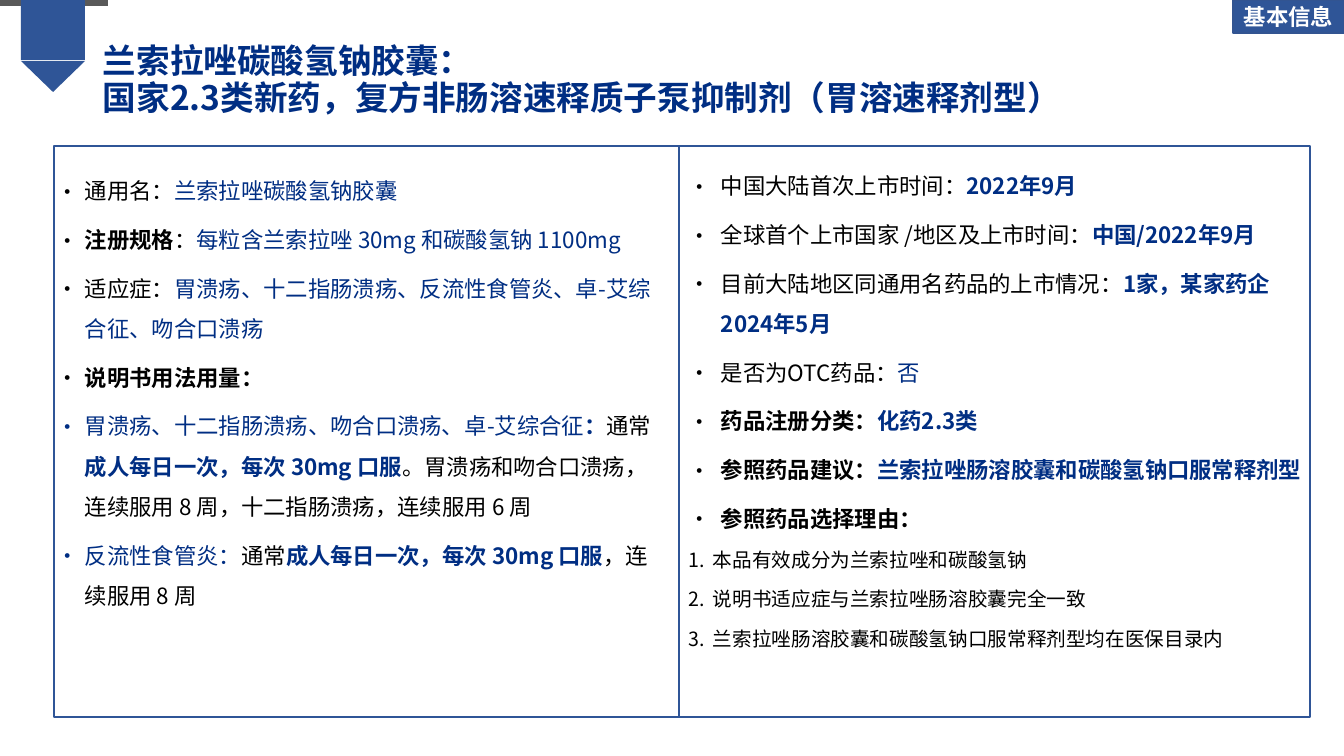
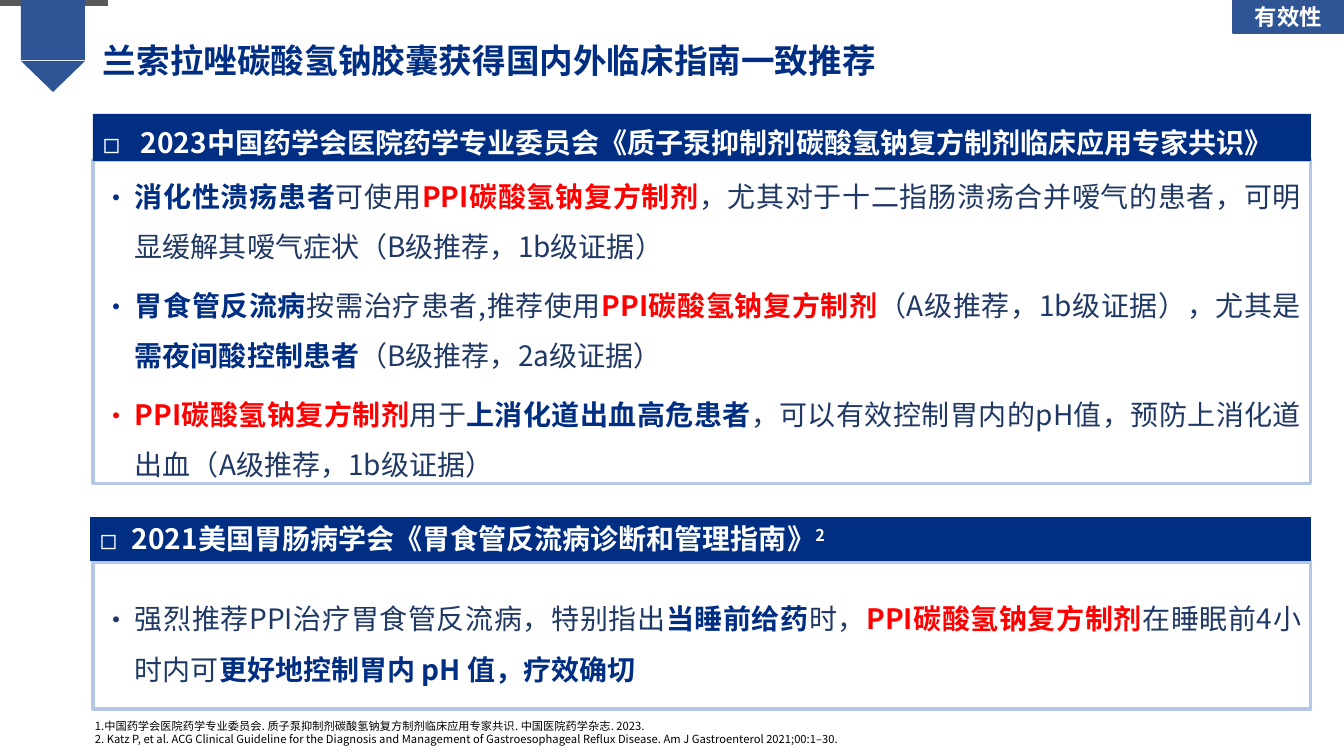
from lxml import etree
from pptx import Presentation
from pptx import util as u
from pptx.dml.color import RGBColor
from pptx.enum import shapes, text
from pptx.oxml.ns import qn

FONT = "Noto Sans CJK SC"
PX = 914400 / 100.8
COLORS = {
    "navy": "002E83", "blue": "2F5597", "edge": "325491", "pale": "B4C7E7",
    "ink": "203864", "black": "000000", "red": "FF0000", "gray": "595959",
    "white": "FFFFFF",
}
# run style: colour, bold
STYLES = {
    "plain": ("black", False), "label": ("black", True),
    "value": ("navy", False), "key": ("navy", True),
    "body": ("ink", False), "hot": ("red", True),
    "head": ("white", True), "super": ("white", True),
}

# paragraph looks
FACT = dict(size=16, spacing=1.5, before=6, indent=28, bullet="•")
MARKET = dict(FACT, indent=32)
REASON = dict(size=14, spacing=1.5, before=3, indent=24, bullet="1.")
ADVICE = dict(size=20, spacing=1.5, before=3, after=3, indent=32, bullet="•",
              align=text.PP_ALIGN.JUSTIFY)
TITLE = dict(size=24, spacing=0.9)
TAG = dict(size=16, align=text.PP_ALIGN.CENTER)
NOTE = dict(size=8)

BASICS = [
    [("通用名：", "plain"), ("兰索拉唑碳酸氢钠胶囊", "value")],
    [("注册规格", "label"), ("：", "plain"),
     ("每粒含兰索拉唑 30mg 和碳酸氢钠 1100mg", "value")],
    [("适应症：", "plain"),
     ("胃溃疡、十二指肠溃疡、反流性食管炎、卓-艾综合征、吻合口溃疡", "value")],
    [("说明书用法用量：", "label")],
    [("胃溃疡、十二指肠溃疡、吻合口溃疡、卓-艾综合征", "value"), ("：", "key"),
     ("通常", "plain"), ("成人每日一次，每次 30mg 口服", "key"),
     ("。胃溃疡和吻合口溃疡，连续服用 8 周，十二指肠溃疡，连续服用 6 周", "plain")],
    [("反流性食管炎：", "value"), ("通常", "plain"),
     ("成人每日一次，每次 30mg 口服", "key"), ("，连续服用 8 周", "plain")],
]
LISTING = [
    [("中国大陆首次上市时间：", "plain"), ("2022年9月", "key")],
    [("全球首个上市国家 /地区及上市时间：", "plain"), ("中国/2022年9月", "key")],
    [("目前大陆地区同通用名药品的上市情况：", "plain"),
     ("1家，某家药企2024年5月", "key")],
    [("是否为OTC药品：", "plain"), ("否", "value")],
    [("药品注册分类：", "label"), ("化药2.3类", "key")],
    [("参照药品建议：", "label"), ("兰索拉唑肠溶胶囊和碳酸氢钠口服常释剂型", "key")],
    [("参照药品选择理由：", "label")],
]
REASONS = [
    [("本品有效成分为兰索拉唑和碳酸氢钠", "plain")],
    [("说明书适应症与兰索拉唑肠溶胶囊完全一致", "plain")],
    [("兰索拉唑肠溶胶囊和碳酸氢钠口服常释剂型均在医保目录内", "plain")],
]
COMPOUND = ("PPI碳酸氢钠复方制剂", "hot")
GUIDELINES = [
    dict(
        head=[("2023中国药学会医院药学专业委员会"
               "《质子泵抑制剂碳酸氢钠复方制剂临床应用专家共识》", "head")],
        look=dict(size=20, spacing=1.2, indent=38, bullet="◻"),
        band=(93, 114, 1218, 47), panel=(93, 160, 1218, 324),
        advice=[
            [("消化性溃疡患者", "key"), ("可使用", "body"), COMPOUND,
             ("，尤其对于十二指肠溃疡合并嗳气的患者，可明显缓解其嗳气症状"
              "（B级推荐，1b级证据）", "body")],
            [("胃食管反流病", "key"), ("按需治疗患者,推荐使用", "body"), COMPOUND,
             ("（A级推荐，1b级证据），尤其是", "body"),
             ("需夜间酸控制患者", "key"), ("（B级推荐，2a级证据）", "body")],
            [COMPOUND, ("用于", "body"), ("上消化道出血高危患者", "key"),
             ("，可以有效控制胃内的pH值，预防上消化道出血"
              "（A级推荐，1b级证据）", "body")],
        ],
    ),
    dict(
        head=[("2021美国胃肠病学会《胃食管反流病诊断和管理指南》", "head"),
              ("2", "super")],
        look=dict(size=20, indent=32, bullet="◻"),
        band=(90, 517, 1221, 44), panel=(93, 562, 1218, 147),
        advice=[
            [("强烈推荐PPI治疗胃食管反流病，特别指出", "body"),
             ("当睡前给药", "key"), ("时，", "body"), COMPOUND,
             ("在睡眠前4小时内可", "body"),
             ("更好地控制胃内 pH 值，疗效确切", "key")],
        ],
    ),
]
REFERENCES = [
    [("1.中国药学会医院药学专业委员会. 质子泵抑制剂碳酸氢钠复方制剂临床应用专家共识. "
      "中国医院药学杂志. 2023.", "plain")],
    [("2. Katz P, et al. ACG Clinical Guideline for the Diagnosis and Management of "
      "Gastroesophageal Reflux Disease. Am J Gastroenterol 2021;00:1–30.", "plain")],
]


def px(*lengths):
    return [u.Emu(round(length * PX)) for length in lengths]


def rgb(name):
    return RGBColor.from_string(COLORS[name])


def add_bullet(paragraph, mark, indent):
    """Hanging bullet; the mark "1." stands for automatic numbers."""
    props = paragraph._p.get_or_add_pPr()
    width = px(indent)[0]
    props.set("marL", str(width))
    props.set("indent", str(-width))
    if mark == "1.":
        etree.SubElement(props, qn("a:buAutoNum"), type="arabicPeriod")
    else:
        etree.SubElement(props, qn("a:buFont"), typeface=FONT)
        etree.SubElement(props, qn("a:buChar"), char=mark)


def write(shape, lines, anchor=text.MSO_ANCHOR.TOP):
    """Fill a shape with (runs, look) lines."""
    frame = shape.text_frame
    frame.word_wrap = True
    frame.vertical_anchor = anchor
    for index, (runs, look) in enumerate(lines):
        paragraph = frame.add_paragraph() if index else frame.paragraphs[0]
        paragraph.alignment = look.get("align", text.PP_ALIGN.LEFT)
        paragraph.line_spacing = look.get("spacing", 1.0)
        paragraph.space_before = u.Pt(look.get("before", 0) if index else 0)
        paragraph.space_after = u.Pt(look.get("after", 0))
        if "bullet" in look:
            add_bullet(paragraph, look["bullet"], look["indent"])
        paragraph.font.size = u.Pt(look["size"])
        paragraph.font.name = FONT
        defaults = paragraph._p.pPr.find(qn("a:defRPr"))
        etree.SubElement(defaults, qn("a:ea"), typeface=FONT)
        for words, style in runs:
            run = paragraph.add_run()
            run.text = words
            color, run.font.bold = STYLES[style]
            run.font.color.rgb = rgb(color)
            if style == "super":
                run._r.get_or_add_rPr().set("baseline", "30000")


def styled(paragraphs, look):
    return [(runs, look) for runs in paragraphs]


def add_block(slide, box, fill=None, line=None, weight=1,
              kind=shapes.MSO_SHAPE.RECTANGLE):
    block = slide.shapes.add_shape(kind, *px(*box))
    block.shadow.inherit = False
    if fill:
        block.fill.solid()
        block.fill.fore_color.rgb = rgb(fill)
    else:
        block.fill.background()
    if line:
        block.line.color.rgb = rgb(line)
        block.line.width = u.Pt(weight)
    else:
        block.line.fill.background()
    return block


def add_text(slide, box, lines):
    write(slide.shapes.add_textbox(*px(*box)), lines)


def add_page(deck, tag, title):
    """Blank slide with the ribbon, the section tag and the title."""
    slide = deck.slides.add_slide(deck.slide_layouts[6])
    add_block(slide, (0, 0, 108, 6), "gray")
    add_block(slide, (21, 0, 64, 60), "blue")
    tip = add_block(slide, (21, 61, 64, 31), "blue",
                    kind=shapes.MSO_SHAPE.ISOSCELES_TRIANGLE)
    tip.rotation = 180
    corner = add_block(slide, (1233, 0, 111, 33), "blue", "edge")
    write(corner, [([(tag, "head")], TAG)], text.MSO_ANCHOR.MIDDLE)
    add_text(slide, (93, 40, 1159, 57),
             [([(line, "key")], TITLE) for line in title])
    return slide


def build_basics(deck):
    slide = add_page(deck, "基本信息", [
        "兰索拉唑碳酸氢钠胶囊：",
        "国家2.3类新药，复方非肠溶速释质子泵抑制剂（胃溶速释剂型）"])
    for left, width in ((54, 625), (679, 631)):
        add_block(slide, (left, 146, width, 571), line="blue")
    add_text(slide, (47, 159, 632, 563), styled(BASICS, FACT))
    add_text(slide, (679, 154, 649, 600),
             styled(LISTING, MARKET) + styled(REASONS, REASON))


def build_guidelines(deck):
    slide = add_page(deck, "有效性", ["兰索拉唑碳酸氢钠胶囊获得国内外临床指南一致推荐"])
    for guide in GUIDELINES:
        panel = add_block(slide, guide["panel"], "white", "pale", 2.25)
        write(panel, styled(guide["advice"], ADVICE), text.MSO_ANCHOR.MIDDLE)
        band = add_block(slide, guide["band"], "navy")
        write(band, [(guide["head"], guide["look"])])
    add_text(slide, (85, 714, 1226, 37), styled(REFERENCES, NOTE))


def main():
    deck = Presentation()
    deck.slide_width, deck.slide_height = px(1344, 756)
    build_basics(deck)
    build_guidelines(deck)
    deck.save("out.pptx")


if __name__ == "__main__":
    main()
